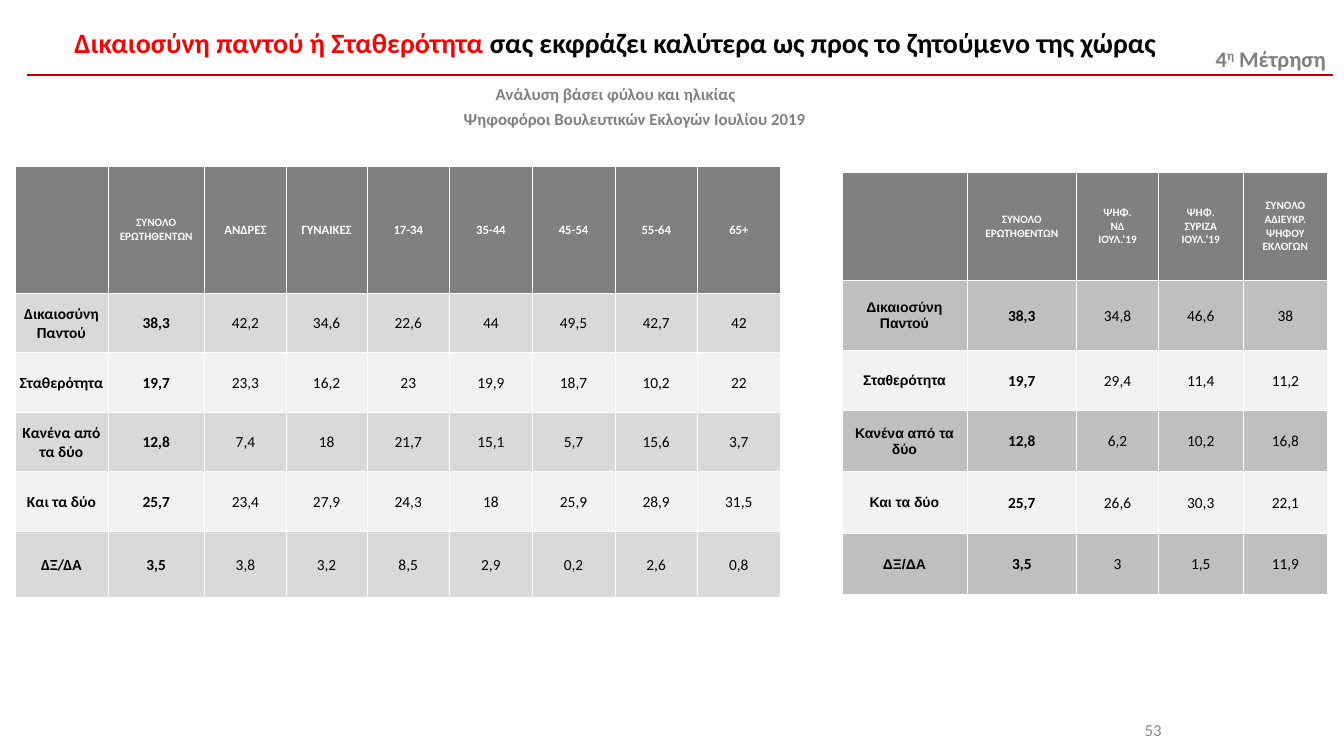
import dataclasses

import lxml.etree
import pptx
import pptx.dml.color
import pptx.enum.shapes
import pptx.enum.text
import pptx.oxml.ns
import pptx.util

Inches = pptx.util.Inches
Pt = pptx.util.Pt
CENTER = pptx.enum.text.PP_ALIGN.CENTER
RIGHT = pptx.enum.text.PP_ALIGN.RIGHT
MIDDLE = pptx.enum.text.MSO_ANCHOR.MIDDLE


def rgb(value):
    return pptx.dml.color.RGBColor.from_string(value)


@dataclasses.dataclass
class Theme:
    font: str = "Calibri"
    label_font: str = "Arial"
    white: str = "FFFFFF"
    black: str = "000000"
    red: str = "FF0000"
    rule: str = "C00000"
    gray: str = "808080"
    number: str = "8C8C8C"
    dark_band: str = "BFBFBF"
    mid_band: str = "D9D9D9"
    light_band: str = "F2F2F2"
    title_size: float = 20
    badge_size: float = 16
    note_size: float = 12
    value_size: float = 11
    label_size: float = 10
    header_size: float = 9
    small_size: float = 8


class SlideBuilder:
    def __init__(self, slide, theme):
        self.slide = slide
        self.theme = theme

    def fill_paragraph(self, paragraph, runs, size, bold=True, font=None, **layout):
        """Fill a paragraph with (text, colour, baseline) runs."""
        margin = layout.pop("margin", 0)
        for name, value in layout.items():
            setattr(paragraph, name, value)
        if margin:
            paragraph._p.get_or_add_pPr().set("marL", str(Inches(margin)))
        for text, color, baseline in runs:
            run = paragraph.add_run()
            run.text = text
            style = {"name": font or self.theme.font, "size": Pt(size), "bold": bold}
            for name, value in style.items():
                setattr(run.font, name, value)
            run.font.color.rgb = rgb(color)
            if baseline:
                run._r.get_or_add_rPr().set("baseline", str(baseline * 1000))

    def line(self, left, top, right, color, width):
        connector = self.slide.shapes.add_connector(
            pptx.enum.shapes.MSO_CONNECTOR.STRAIGHT,
            Inches(left), Inches(top), Inches(right), Inches(top))
        connector.line.color.rgb = rgb(color)
        connector.line.width = Pt(width)
        lxml.etree.SubElement(connector._element.spPr, pptx.oxml.ns.qn("a:effectLst"))

    def text(self, box, paragraphs, wrap=True):
        frame = self.slide.shapes.add_textbox(*map(Inches, box)).text_frame
        frame.word_wrap = wrap
        for index, content in enumerate(paragraphs):
            paragraph = frame.add_paragraph() if index else frame.paragraphs[0]
            self.fill_paragraph(paragraph, **content)

    def panel(self, box, fill, content):
        shape = self.slide.shapes.add_shape(
            pptx.enum.shapes.MSO_SHAPE.RECTANGLE, *map(Inches, box))
        shape.shadow.inherit = False
        shape.fill.solid()
        shape.fill.fore_color.rgb = rgb(fill)
        shape.line.fill.background()
        shape.text_frame.vertical_anchor = MIDDLE
        self.fill_paragraph(shape.text_frame.paragraphs[0], **content)

    def cell(self, cell, text, fill, color, tight, **style):
        properties = cell._tc.get_or_add_tcPr()
        for side in ("lnL", "lnR", "lnT", "lnB"):
            border = lxml.etree.SubElement(
                properties, pptx.oxml.ns.qn("a:" + side), w=str(Pt(0.5)))
            solid = lxml.etree.SubElement(border, pptx.oxml.ns.qn("a:solidFill"))
            lxml.etree.SubElement(
                solid, pptx.oxml.ns.qn("a:srgbClr"), val=self.theme.white)
        cell.fill.solid()
        cell.fill.fore_color.rgb = rgb(fill)
        cell.vertical_anchor = MIDDLE
        if tight:
            margins = {"margin_left": 0.01, "margin_right": 0.01,
                       "margin_top": 0.01, "margin_bottom": 0}
            for name, value in margins.items():
                setattr(cell, name, Inches(value))
        for index, line in enumerate(text.split("\n") if text else []):
            frame = cell.text_frame
            paragraph = frame.add_paragraph() if index else frame.paragraphs[0]
            self.fill_paragraph(paragraph, [(line, color, 0)], alignment=CENTER, **style)

    def table(self, left, top, widths, heights, headers, rows, band, label_style):
        theme = self.theme
        table = self.slide.shapes.add_table(
            len(heights), len(widths), Inches(left), Inches(top),
            Inches(sum(widths)), Inches(sum(heights))).table
        table.first_row = table.horz_banding = False
        for column, width in zip(table.columns, widths):
            column.width = Inches(width)
        for row, height in zip(table.rows, heights):
            row.height = Inches(height)
        # Header row: (text, size), with narrow margins for the age groups
        for column, (text, size) in enumerate(headers):
            self.cell(table.cell(0, column), text, theme.gray, theme.white,
                      tight=text[:1].isdigit(), size=size)
        # Banded body: bold label and total, then plain values
        for number, values in enumerate(rows, start=1):
            fill = band if number % 2 else theme.light_band
            for column, text in enumerate(values):
                style = label_style if column == 0 else {"size": theme.value_size}
                self.cell(table.cell(number, column), text, fill, theme.black,
                          tight=True, bold=column < 2, **style)


def main():
    theme = Theme()
    presentation = pptx.Presentation()
    presentation.slide_width = Inches(13.33)
    presentation.slide_height = Inches(7.5)
    builder = SlideBuilder(
        presentation.slides.add_slide(presentation.slide_layouts[6]), theme)

    # Heading
    builder.line(0.27, 0.74, 13.22, theme.rule, 1.5)
    builder.text((11.96, 0.4, 1.37, 0.37), [
        {"runs": [("4", theme.gray, 0), ("η", theme.gray, 30),
                  (" Μέτρηση", theme.gray, 0)], "size": theme.badge_size}], wrap=False)
    note = {"size": theme.note_size, "alignment": CENTER, "line_spacing": 1.2}
    builder.text((0.32, 0.17, 11.57, 1.42), [
        {"runs": [("Δικαιοσύνη παντού ή Σταθερότητα ", theme.red, 0),
                  ("σας εκφράζει καλύτερα ως προς το ζητούμενο της χώρας",
                   theme.black, 0)],
         "size": theme.title_size, "alignment": CENTER, "line_spacing": 1.1},
        {"runs": [("Ανάλυση βάσει φύλου και ηλικίας", theme.gray, 0)],
         "space_before": Pt(15), **note},
        {"runs": [("Ψηφοφόροι Βουλευτικών Εκλογών Ιουλίου 2019", theme.gray, 0)],
         "margin": 0.38, **note}])

    # Page number
    builder.panel((10.98, 7.04, 0.64, 0.4), theme.white, {
        "runs": [("53", theme.number, 0)], "size": theme.note_size,
        "bold": False, "alignment": RIGHT})

    # Shared row labels and totals
    labels = ["Δικαιοσύνη Παντού", "Σταθερότητα", "Κανένα από τα δύο",
              "Και τα δύο", "ΔΞ/ΔΑ"]
    totals = ["38,3", "19,7", "12,8", "25,7", "3,5"]
    total_header = "ΣΥΝΟΛΟ\nΕΡΩΤΗΘΕΝΤΩΝ"

    # Results by past vote
    by_vote = ["34,8 46,6 38", "29,4 11,4 11,2", "6,2 10,2 16,8",
               "26,6 30,3 22,1", "3 1,5 11,9"]
    vote_headers = ["", total_header, "ΨΗΦ.\nΝΔ\nΙΟΥΛ.‘19", "ΨΗΦ.\nΣΥΡΙΖΑ\nΙΟΥΛ.‘19",
                    "ΣΥΝΟΛΟ\nΑΔΙΕΥΚΡ.\nΨΗΦΟΥ\nΕΚΛΟΓΩΝ"]
    builder.table(
        8.35, 1.71, [1.24, 1.09, 0.81, 0.84, 0.84], [1.07, 0.7, 0.59] + [0.61] * 3,
        [(header, theme.small_size) for header in vote_headers],
        [[label, total, *values.split()]
         for label, total, values in zip(labels, totals, by_vote)],
        theme.dark_band, {"size": theme.label_size, "font": theme.label_font})

    # Results by gender and age
    by_group = ["42,2 34,6 22,6 44 49,5 42,7 42", "23,3 16,2 23 19,9 18,7 10,2 22",
                "7,4 18 21,7 15,1 5,7 15,6 3,7", "23,4 27,9 24,3 18 25,9 28,9 31,5",
                "3,8 3,2 8,5 2,9 0,2 2,6 0,8"]
    groups = ["ΑΝΔΡΕΣ", "ΓΥΝΑΙΚΕΣ", "17-34", "35-44", "45-54", "55-64", "65+"]
    builder.table(
        0.15, 1.65, [0.92, 0.96, 0.81, 0.8] + [0.82] * 5, [1.26] + [0.59] * 4 + [0.66],
        [("", theme.small_size), (total_header, theme.small_size)]
        + [(group, theme.header_size) for group in groups],
        [[label, total, *values.split()]
         for label, total, values in zip(labels, totals, by_group)],
        theme.mid_band, {"size": theme.value_size})

    presentation.save("out.pptx")


if __name__ == "__main__":
    main()
